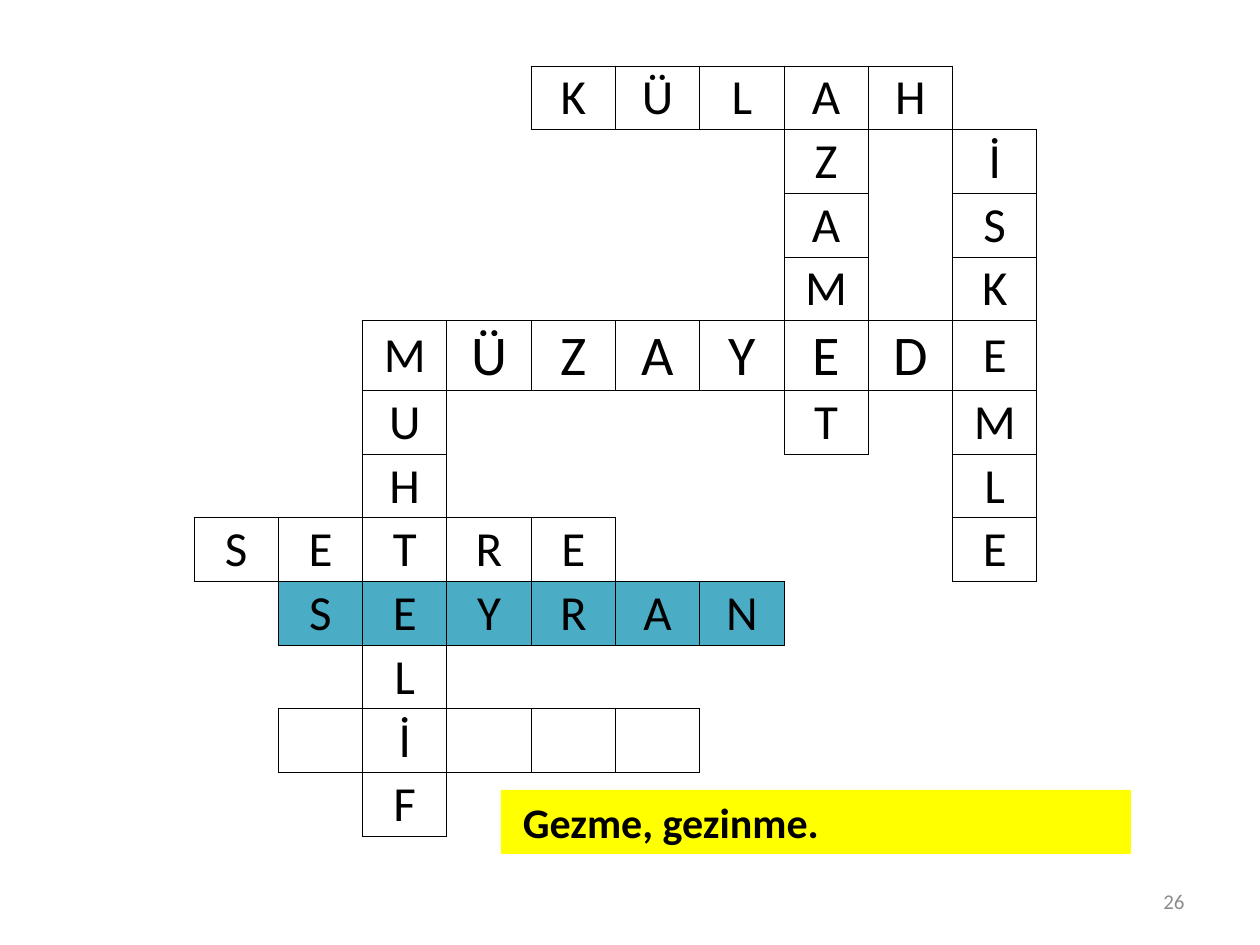
from lxml.etree import SubElement
from pptx import Presentation
from pptx.dml.color import RGBColor
from pptx.enum.shapes import MSO_SHAPE
from pptx.enum.text import MSO_ANCHOR, MSO_AUTO_SIZE, PP_ALIGN
from pptx.oxml import parse_xml
from pptx.oxml.ns import qn
from pptx.util import Emu, Pt

# Content: a dot is outside the puzzle, a box is a square left blank
OUTSIDE, BLANK = ".", "□"
PUZZLE = [
    "....KÜLAH.",
    ".......Z.İ",
    ".......A.S",
    ".......M.K",
    "..MÜZAYEDE",
    "..U....T.M",
    "..H......L",
    "SETRE....E",
    ".SEYRAN...",
    "..L.......",
    ".□İ□□□....",
    "..F.......",
]
CLUE = " Gezme, gezinme."
PAGE_NUMBER = "26"

ANSWER_ROW, LARGE_ROW = 8, 4
LARGE_COLUMNS = range(3, 9)
LETTER_SIZE, LARGE_SIZE = 28, 32

COLORS = {"ink": "000000", "answer": "4BACC6", "clue": "FFFF00", "page": "8C8C8C"}
FONT = "Calibri"
SIDES = {"a:lnL": (0, -1), "a:lnR": (0, 1), "a:lnT": (-1, 0), "a:lnB": (1, 0)}
A_NS = "http://schemas.openxmlformats.org/drawingml/2006/main"


def px(length):
    return Emu(round(length * 914400 / 126))


def write(frame, text, size, color, align, bold=False):
    frame.text = text
    paragraph = frame.paragraphs[0]
    paragraph.alignment = align
    font = paragraph.runs[0].font
    font.name, font.size, font.bold = FONT, Pt(size), bold
    font.color.rgb = RGBColor.from_string(COLORS[color])


def is_square(row, column):
    inside = 0 <= row < len(PUZZLE) and 0 <= column < len(PUZZLE[0])
    return inside and PUZZLE[row][column] != OUTSIDE


def draw_borders(cell, row, column):
    """Rule every side that touches a puzzle square, here or next to it."""
    properties = cell._tc.get_or_add_tcPr()
    for index, (side, (down, right)) in enumerate(SIDES.items()):
        line = parse_xml(f'<{side} xmlns:a="{A_NS}" w="{Pt(0.5)}"/>')
        if is_square(row, column) or is_square(row + down, column + right):
            fill = SubElement(line, qn("a:solidFill"))
            SubElement(fill, qn("a:srgbClr"), val=COLORS["ink"])
        else:
            SubElement(line, qn("a:noFill"))
        properties.insert(index, line)


presentation = Presentation()
presentation.slide_width, presentation.slide_height = px(1260), px(945)
slide = presentation.slides.add_slide(presentation.slide_layouts[6])

# Page number
page = slide.shapes.add_textbox(px(903), px(876), px(294), px(50)).text_frame
page.word_wrap = True
page.vertical_anchor = MSO_ANCHOR.MIDDLE
write(page, PAGE_NUMBER, 12, "page", PP_ALIGN.RIGHT)

# Crossword
crossword = slide.shapes.add_table(
    len(PUZZLE), len(PUZZLE[0]), px(194), px(66), px(843), px(764)
).table
crossword.first_row = crossword.horz_banding = False
crossword.rows[LARGE_ROW].height = px(70)
for row, letters in enumerate(PUZZLE):
    for column, letter in enumerate(letters):
        cell = crossword.cell(row, column)
        if letter not in (OUTSIDE, BLANK):
            cell.margin_left = cell.margin_right = cell.margin_top = px(1)
            cell.margin_bottom = 0
            cell.vertical_anchor = MSO_ANCHOR.MIDDLE
            large = row == LARGE_ROW and column in LARGE_COLUMNS
            size = LARGE_SIZE if large else LETTER_SIZE
            write(cell.text_frame, letter, size, "ink", PP_ALIGN.CENTER)
        if row == ANSWER_ROW and is_square(row, column):
            cell.fill.solid()
            cell.fill.fore_color.rgb = RGBColor.from_string(COLORS["answer"])
        else:
            cell.fill.background()
        draw_borders(cell, row, column)

# Clue
clue = slide.shapes.add_shape(MSO_SHAPE.RECTANGLE, px(501), px(790), px(630), px(64))
clue.shadow.inherit = False
clue.fill.solid()
clue.fill.fore_color.rgb = RGBColor.from_string(COLORS["clue"])
clue.line.fill.background()
clue.text_frame.word_wrap = True
clue.text_frame.auto_size = MSO_AUTO_SIZE.SHAPE_TO_FIT_TEXT
clue.text_frame.vertical_anchor = MSO_ANCHOR.TOP
write(clue.text_frame, CLUE, 24, "ink", PP_ALIGN.LEFT, bold=True)

presentation.save("out.pptx")
